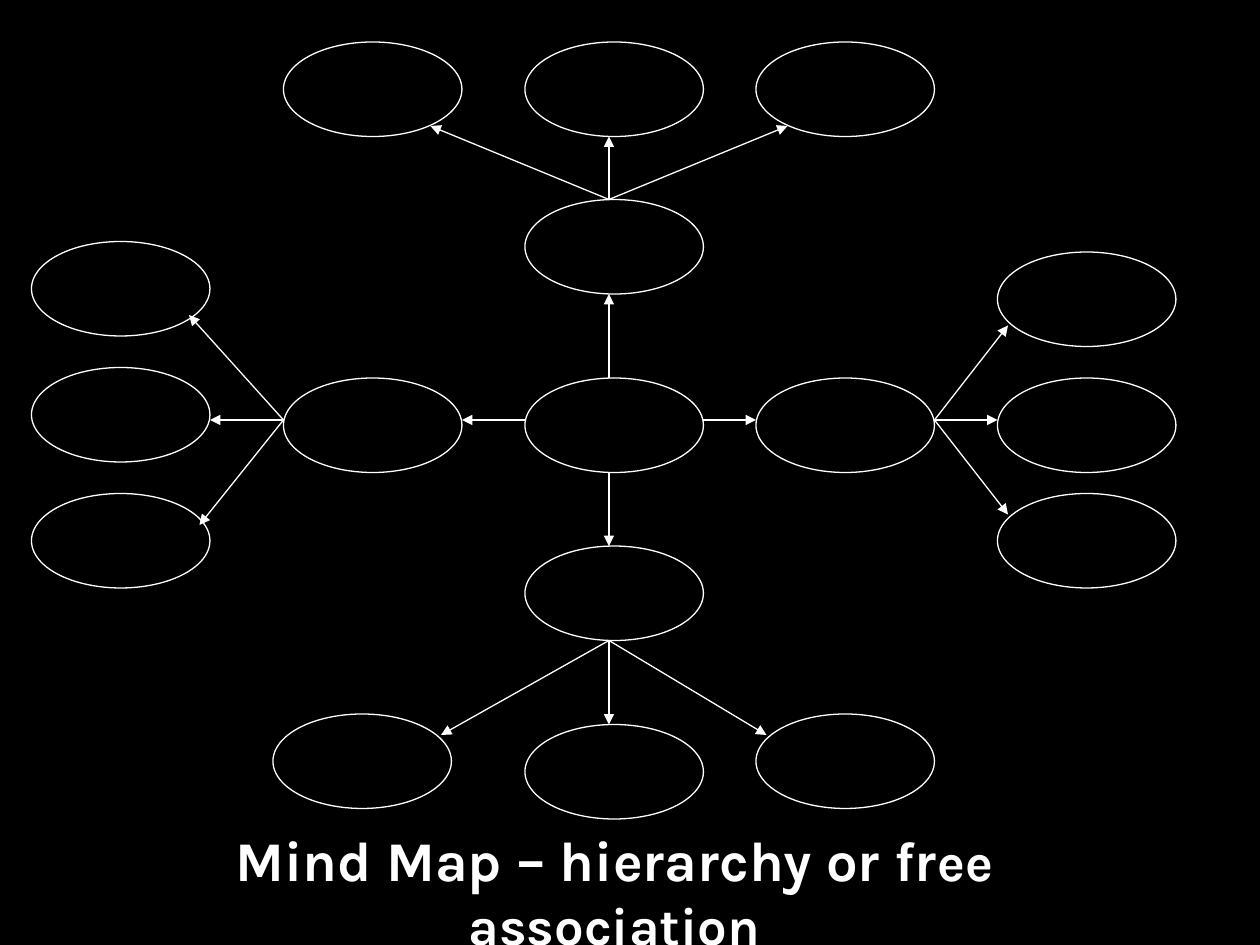
from dataclasses import dataclass
from pptx import Presentation
from pptx.dml.color import RGBColor
from pptx.enum.shapes import MSO_CONNECTOR as CONN, MSO_SHAPE as SHAPE
from pptx.enum.text import MSO_ANCHOR as ANCHOR, MSO_AUTO_SIZE as AUTO, PP_ALIGN as ALIGN
from pptx.util import Pt
from lxml.etree import SubElement
from pptx.oxml.ns import qn


@dataclass(frozen=True)
class Theme:
    background: RGBColor = RGBColor(0, 0, 0)
    ink: RGBColor = RGBColor(255, 255, 255)
    font: str = "Karla"
    title_size: int = 32
    title_end_size: int = 30
    line: float = 0.75
    node_w: int = 102
    node_h: int = 54


T = Theme()

BRANCHES = [
    dict(box=(162, 24), hub=(138, 90), joint=(186, 90),
         leaves=[(0, 0), (138, 0), (270, 0)],
         tips=[(84, 48), (186, 90), (186, 54), (288, 48)]),
    dict(box=(432, 144), hub=(0, 72), joint=(102, 96),
         leaves=[(138, 0), (138, 72), (138, 138)],
         tips=[(144, 42), (138, 96), (144, 150)]),
    dict(box=(156, 312), hub=(144, 0), joint=(192, 54),
         leaves=[(0, 96), (144, 102), (276, 96)],
         tips=[(96, 108), (192, 102), (282, 108)]),
    dict(box=(18, 138), hub=(144, 78), joint=(144, 102),
         leaves=[(0, 0), (0, 72), (0, 144)],
         tips=[(90, 42), (102, 102), (96, 162)]),
]
SPOKES = [((48, 0), (48, -48)), ((102, 24), (132, 24)),
          ((48, 54), (48, 96)), ((0, 24), (-36, 24))]


def shift(box, point):
    return box[0] + point[0], box[1] + point[1]


def style_line(line):
    line.color.rgb = T.ink
    line.width = Pt(T.line)


def add_node(s, at):
    sp = s.shapes.add_shape(SHAPE.OVAL, Pt(at[0]), Pt(at[1]), Pt(T.node_w), Pt(T.node_h))
    sp.shadow.inherit = False
    sp.fill.background()
    style_line(sp.line)


def add_arrow(s, start, end):
    cx = s.shapes.add_connector(CONN.STRAIGHT, *map(Pt, start + end))
    style_line(cx.line)
    SubElement(cx.line._get_or_add_ln(), qn("a:tailEnd"), type="triangle")
    SubElement(cx._element.spPr, qn("a:effectLst"))


def add_branch(s, box, hub, joint, leaves, tips):
    for node in leaves + [hub]:
        add_node(s, shift(box, node))
    for tip in tips:
        add_arrow(s, shift(box, joint), shift(box, tip))


def add_center(s, box):
    add_node(s, box)
    for start, end in SPOKES:
        add_arrow(s, shift(box, start), shift(box, end))


def add_title(s, left, top, width, height):
    sp = s.shapes.title
    sp.left, sp.top, sp.width, sp.height = map(Pt, (left, top, width, height))
    tf = sp.text_frame
    tf.word_wrap = True
    tf.auto_size = AUTO.SHAPE_TO_FIT_TEXT
    tf.vertical_anchor = ANCHOR.TOP
    p = tf.paragraphs[0]
    p.alignment = ALIGN.CENTER
    for text, size in [("Mind Map – hierarchy or fr", T.title_size),
                       ("ee association", T.title_end_size)]:
        r = p.add_run()
        r.text = text
        r.font.name = T.font
        r.font.size = Pt(size)
        r.font.bold = True
        r.font.color.rgb = T.ink


def main():
    prs = Presentation()
    prs.slide_width, prs.slide_height = Pt(720), Pt(540)
    s = prs.slides.add_slide(prs.slide_layouts[5])
    s.background.fill.solid()
    s.background.fill.fore_color.rgb = T.background
    for branch in BRANCHES:
        add_branch(s, **branch)
    add_center(s, (300, 216))
    add_title(s, 42, 468, 618, 46)
    prs.save("out.pptx")


if __name__ == "__main__":
    main()
